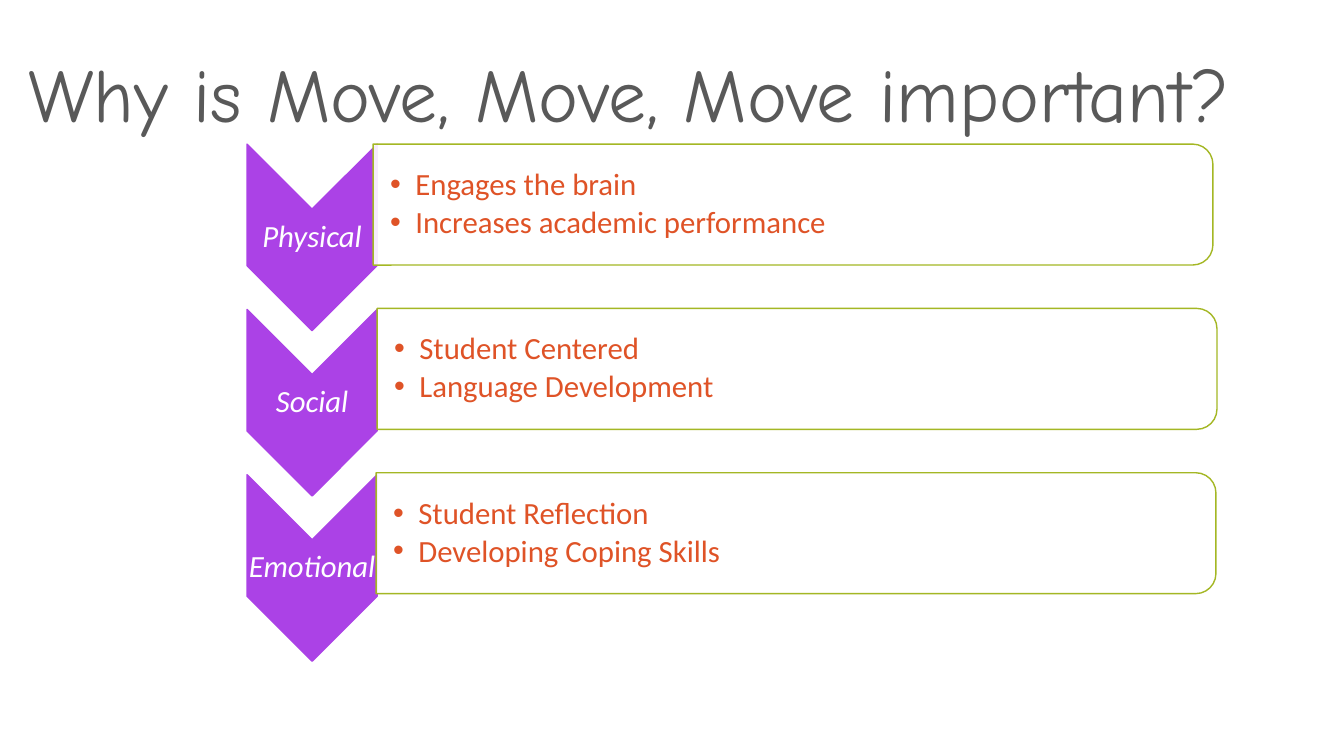
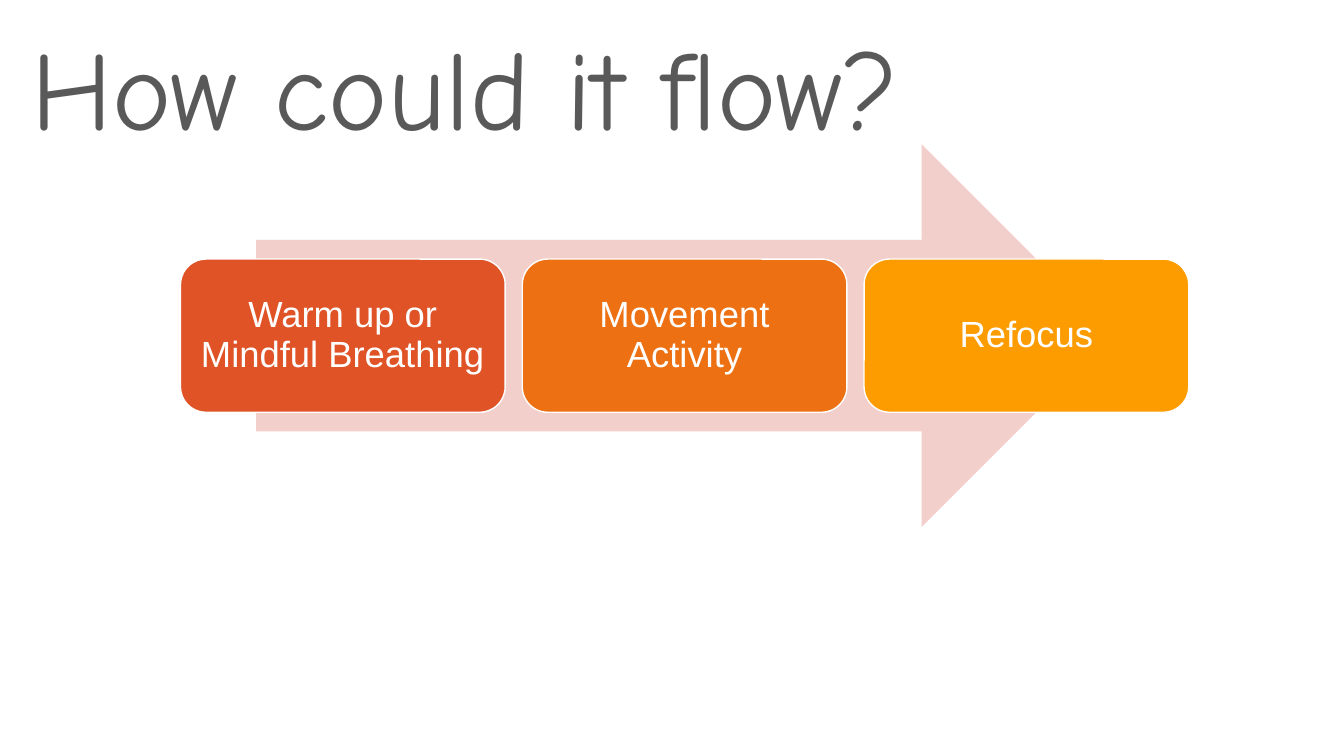
from dataclasses import dataclass

from pptx import Presentation
from pptx.dml.color import RGBColor
from pptx.enum.shapes import MSO_SHAPE
from pptx.enum.text import MSO_ANCHOR, MSO_AUTO_SIZE, PP_ALIGN
from pptx.oxml.xmlchemy import OxmlElement
from pptx.util import Pt

CHEVRON = MSO_SHAPE.CHEVRON
PANEL = MSO_SHAPE.ROUND_2_SAME_RECTANGLE
ARROW = MSO_SHAPE.RIGHT_ARROW
CARD = MSO_SHAPE.ROUNDED_RECTANGLE
MIDDLE, BOTTOM = MSO_ANCHOR.MIDDLE, MSO_ANCHOR.BOTTOM
LEFT, CENTER = PP_ALIGN.LEFT, PP_ALIGN.CENTER
NO_AUTOFIT = MSO_AUTO_SIZE.NONE

PX = 9144  # EMU in one px, 100 px to the inch
SLIDE_SIZE = (1333, 750)
TITLE_ONLY = 5


@dataclass(frozen=True)
class Theme:
    title_color: str = "595959"
    white: str = "FFFFFF"
    chevron: str = "AB42E6"
    panel_line: str = "A4B724"
    accent: str = "DF5327"
    arrow: str = "F3CFCB"
    title_font: str = "Comic Neue"
    reason_font: str = "Calibri"
    step_font: str = "Arial"
    reason_size: int = 22
    step_size: int = 26
    line_spacing: float = 0.9
    bullet_gap: float = 3.3
    outline: int = 1


THEME = Theme()

# Content
IMPORTANCE = {
    "title": "Why is Move, Move, Move important?",
    "title_box": (18, 12, 1242, 131),
    "title_size": 54,
    # label, left edge of the panel, bullets
    "reasons": [
        ("Physical", 370, ["Engages the brain", "Increases academic performance"]),
        ("Social", 374, ["Student Centered", "Language Development"]),
        ("Emotional", 373, ["Student Reflection", "Developing Coping Skills"]),
    ],
}
FLOW = {
    "title": "How could it flow?",
    "title_box": (21, 27, 1260, 131),
    "title_size": 80,
    "steps": [
        ("Warm up or Mindful Breathing", THEME.accent),
        ("Movement Activity", "ED7013"),
        ("Refocus", "FC9C00"),
    ],
}

# Layout in px
TOP = 143
CHEVRON_LEFT, CHEVRON_W, CHEVRON_H, CHEVRON_PITCH = 245, 129, 185, 164
LABEL_DROP, LABEL_H = 65, 55
PANEL_W, PANEL_H, PANEL_PITCH = 833, 120, 163
BULLETS_DROP, BULLETS_W, BULLETS_H = 6, 827, 108
ARROW_BOX = (254, TOP, 850, 380)
CARD_LEFT, CARD_TOP, CARD_W, CARD_H, CARD_GAP = 179, 257, 322, 152, 17
CORNER = 0.167


def emu(box):
    return [round(length * PX) for length in box]


def rgb(color):
    return RGBColor.from_string(color)


def add_figure(slide, preset, box, adjustments, fill, line=None):
    figure = slide.shapes.add_shape(preset, *emu(box))
    figure.shadow.inherit = False
    for index, value in enumerate(adjustments):
        figure.adjustments[index] = value
    figure.fill.solid()
    figure.fill.fore_color.rgb = rgb(fill)
    if line:
        figure.line.color.rgb = rgb(line)
        figure.line.width = Pt(THEME.outline)
    else:
        figure.line.fill.background()
    return figure


def add_turned(slide, preset, box, *style):
    """Add a figure turned by 90 degrees that covers the given box."""
    left, top, width, height = box
    shift = (width - height) / 2
    figure = add_figure(slide, preset, (left + shift, top - shift, height, width), *style)
    figure.rotation = 90
    return figure


def set_opacity(figure, percent):
    alpha = OxmlElement("a:alpha")
    alpha.set("val", str(percent * 1000))
    figure.fill._xPr.solidFill.srgbClr.append(alpha)


def add_bullet(paragraph, color, indent):
    props = paragraph._p.get_or_add_pPr()
    props.set("marL", str(indent * PX))
    props.set("indent", str(-indent * PX))
    bullet_color = OxmlElement("a:buClr")
    swatch = OxmlElement("a:srgbClr")
    swatch.set("val", color)
    bullet_color.append(swatch)
    bullet_font = OxmlElement("a:buFont")
    bullet_font.set("typeface", "Arial")
    bullet = OxmlElement("a:buChar")
    bullet.set("char", "•")
    props.extend([bullet_color, bullet_font, bullet])


def write(shape, lines, font, size, color, insets, align=CENTER, anchor=MIDDLE,
          italic=False, bulleted=False, wrap=True):
    frame = shape.text_frame
    frame.word_wrap = wrap
    frame.auto_size = NO_AUTOFIT
    frame.vertical_anchor = anchor
    (frame.margin_left, frame.margin_top,
     frame.margin_right, frame.margin_bottom) = emu(insets)
    for index, line in enumerate(lines):
        paragraph = frame.add_paragraph() if index else frame.paragraphs[0]
        if bulleted:
            add_bullet(paragraph, color, 25)
        paragraph.alignment = align
        paragraph.line_spacing = THEME.line_spacing
        if index:
            paragraph.space_before = Pt(THEME.bullet_gap)
        run = paragraph.add_run()
        run.text = line
        run.font.name = font
        run.font.size = Pt(size)
        run.font.italic = italic
        run.font.color.rgb = rgb(color)


def add_titled_slide(deck, content):
    slide = deck.slides.add_slide(deck.slide_layouts[TITLE_ONLY])
    title = slide.shapes.title
    title.left, title.top, title.width, title.height = emu(content["title_box"])
    write(title, [content["title"]], THEME.title_font, content["title_size"],
          THEME.title_color, (10, 5, 10, 5), LEFT, BOTTOM)
    return slide


def build_importance(deck):
    slide = add_titled_slide(deck, IMPORTANCE)
    for row, (name, panel_left, bullets) in enumerate(IMPORTANCE["reasons"]):
        # Chevron and its label
        top = TOP + row * CHEVRON_PITCH
        add_turned(slide, CHEVRON, (CHEVRON_LEFT, top, CHEVRON_W, CHEVRON_H),
                   [0.5], THEME.chevron, THEME.chevron)
        label = slide.shapes.add_textbox(
            *emu((CHEVRON_LEFT, top + LABEL_DROP, CHEVRON_W, LABEL_H)))
        write(label, [name], THEME.reason_font, THEME.reason_size, THEME.white,
              (2, 2, 2, 2), italic=True, wrap=False)

        # Panel and its bullets
        top = TOP + row * PANEL_PITCH
        panel = add_turned(slide, PANEL, (panel_left, top, PANEL_W, PANEL_H),
                           [CORNER, 0], THEME.white, THEME.panel_line)
        set_opacity(panel, 90)
        benefits = slide.shapes.add_textbox(
            *emu((panel_left, top + BULLETS_DROP, BULLETS_W, BULLETS_H)))
        write(benefits, bullets, THEME.reason_font, THEME.reason_size, THEME.accent,
              (17, 2, 2, 2), LEFT, bulleted=True)


def build_flow(deck):
    slide = add_titled_slide(deck, FLOW)
    add_figure(slide, ARROW, ARROW_BOX, [0.5, 0.5], THEME.arrow)
    # Step cards over the arrow
    for column, (step, color) in enumerate(FLOW["steps"]):
        left = CARD_LEFT + column * (CARD_W + CARD_GAP)
        card = add_figure(slide, CARD, (left, CARD_TOP, CARD_W, CARD_H),
                          [CORNER], color, THEME.white)
        write(card, [step], THEME.step_font, THEME.step_size, THEME.white,
              (11, 11, 11, 11))


def main():
    deck = Presentation()
    deck.slide_width, deck.slide_height = emu(SLIDE_SIZE)
    build_importance(deck)
    build_flow(deck)
    deck.save("out.pptx")


if __name__ == "__main__":
    main()
